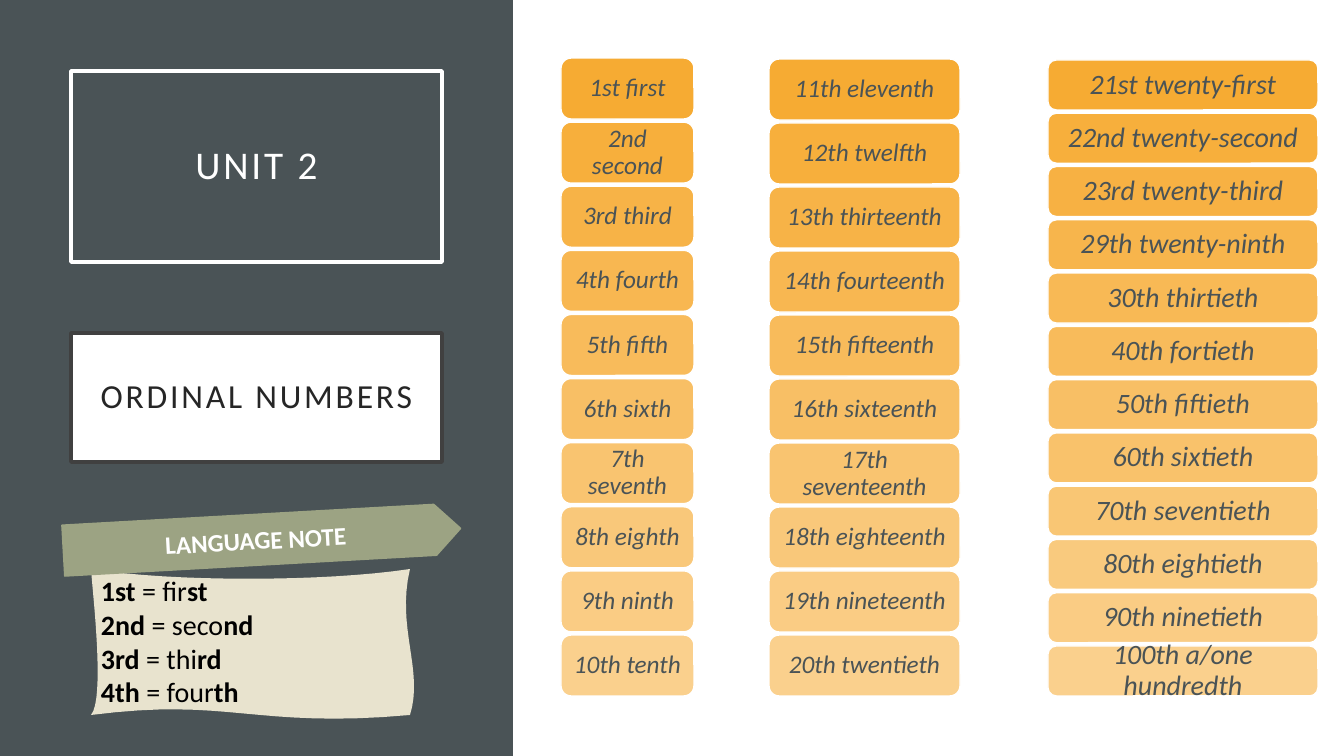
import dataclasses

import pptx
import pptx.util
import pptx.dml.color
import pptx.enum.shapes
import pptx.enum.text
import pptx.oxml.ns
import lxml.etree

Kind = pptx.enum.shapes.MSO_SHAPE
Align = pptx.enum.text.PP_ALIGN
Anchor = pptx.enum.text.MSO_ANCHOR


@dataclasses.dataclass(frozen=True)
class Theme:
    """Colours, font and type sizes of the slide."""
    font: str = "Calibri"
    slate: str = "4A5356"
    white: str = "FFFFFF"
    black: str = "000000"
    ink: str = "262626"
    edge: str = "404040"
    amber: str = "F6A21D"
    sage: str = "9CA383"
    cream: str = "E8E3CE"
    title: int = 28
    topic: int = 24
    body: int = 20
    small: int = 18


THEME = Theme()

FIRST = ["1st first", "2nd second", "3rd third", "4th fourth", "5th fifth",
         "6th sixth", "7th seventh", "8th eighth", "9th ninth", "10th tenth"]
TEENS = ["11th eleventh", "12th twelfth", "13th thirteenth", "14th fourteenth",
         "15th fifteenth", "16th sixteenth", "17th seventeenth",
         "18th eighteenth", "19th nineteenth", "20th twentieth"]
TENS = ["21st twenty-first", "22nd twenty-second", "23rd twenty-third",
        "29th twenty-ninth", "30th thirtieth", "40th fortieth",
        "50th fiftieth", "60th sixtieth", "70th seventieth",
        "80th eightieth", "90th ninetieth", "100th a/one hundredth"]
NOTES = [("1st ", "= fir", "st"), ("2nd ", "= seco", "nd"),
         ("3rd ", "= thi", "rd"), ("4th ", "= four", "th")]
WAVE = [[(80, 13), (234, 13), (319, 0)], [(305, 59), (333, 101), (319, 146)],
        [(163, 160), (139, 128), (0, 146)], [(14, 130), (2, 27), (0, 0)]]


def px(size):
    """Turn px into EMU."""
    return pptx.util.Emu(round(size * 12192000 / 1344))


def rgb(code):
    """Make a colour from its hex code."""
    return pptx.dml.color.RGBColor.from_string(code)


def apply(item, **values):
    """Set each value as an attribute of the item."""
    for name, value in values.items():
        setattr(item, name, value)


def paint(shape, fill=None, line=None, width=1.0, alpha=100):
    """Give a shape its fill and line, without shadow."""
    shape.shadow.inherit = False
    if fill:
        shape.fill.solid()
        shape.fill.fore_color.rgb = rgb(fill)
        if alpha < 100:
            name = pptx.oxml.ns.qn("a:solidFill")
            tint = shape._element.spPr.find(name)[0]
            lxml.etree.SubElement(tint, pptx.oxml.ns.qn("a:alpha"),
                                  val=str(round(alpha * 1000)))
    else:
        shape.fill.background()
    if line:
        shape.line.color.rgb = rgb(line)
        shape.line.width = pptx.util.Pt(width)
    else:
        shape.line.fill.background()


def block(shapes, kind, box, **look):
    """Add a painted preset shape in the box."""
    shape = shapes.add_shape(kind, *map(px, box))
    paint(shape, **look)
    return shape


def write(para, text, size, color, space=0, **values):
    """Add a run of text to a paragraph."""
    run = para.add_run()
    run.text = text
    apply(run.font, name=THEME.font, size=pptx.util.Pt(size), **values)
    run.font.color.rgb = rgb(color)
    if space:
        run._r.get_or_add_rPr().set("spc", str(space * 100))


def label(shape, text, size, color, pad=(10, 5), lead=0.9, **values):
    """Write one centred paragraph in a shape."""
    frame = shape.text_frame
    side, top = map(px, pad)
    apply(frame, word_wrap=True, vertical_anchor=Anchor.MIDDLE,
          margin_left=side, margin_right=side, margin_top=top, margin_bottom=top)
    para = frame.paragraphs[0]
    apply(para, alignment=Align.CENTER, line_spacing=lead)
    write(para, text, size, color, **values)


def column(shapes, box, row, names, size, side):
    """Stack fading number tiles evenly in the box."""
    tiles = shapes.add_group_shape().shapes
    left, top, width, high = box
    last = len(names) - 1
    step = (high - row) / last
    for spot, name in enumerate(names):
        tile = block(tiles, Kind.ROUNDED_RECTANGLE,
                     (left, top + spot * step, width, row),
                     fill=THEME.amber, line=THEME.white, alpha=90 - 40 * spot / last)
        label(tile, name, size, THEME.slate, pad=(side, 4), italic=True)


def curve(start, bends, steps=16):
    """List points along joined cubic curves."""
    dots = []
    for one, two, end in bends:
        for step in range(1, steps + 1):
            t = step / steps
            u = 1 - t
            dots.append(tuple(u**3 * a + 3 * u * u * t * b + 3 * u * t * t * c + t**3 * d
                              for a, b, c, d in zip(start, one, two, end)))
        start = end
    return dots


def note(shapes, box):
    """Place the wavy language note and its arrow banner in the box."""
    parts = shapes.add_group_shape().shapes
    left, top = box[:2]
    x, y = left + 28, top + 55
    pen = parts.build_freeform(px(x), px(y))
    pen.add_line_segments([(px(x + a), px(y + b)) for a, b in curve((0, 0), WAVE)])
    sheet = pen.convert_to_shape()
    paint(sheet, fill=THEME.cream)
    frame = sheet.text_frame
    apply(frame, word_wrap=True, vertical_anchor=Anchor.TOP)
    for spot, words in enumerate(NOTES):
        para = frame.add_paragraph() if spot else frame.paragraphs[0]
        para.alignment = Align.LEFT
        for word, bold in zip(words, (True, False, True)):
            write(para, word, THEME.body, THEME.black, bold=bold)
    flag = block(parts, Kind.PENTAGON, (left, top, box[2], 51),
                 fill=THEME.sage, line=THEME.sage)
    flag.rotation = 356.8
    label(flag, "LANGUAGE NOTE", THEME.small, THEME.white, lead=1.0, bold=True)


def panel(shapes, box):
    """Place the dark side panel with title, topic and note."""
    left, top = box[:2]
    block(shapes, Kind.RECTANGLE, box, fill=THEME.slate)
    head = block(shapes, Kind.RECTANGLE, (left + 71, top + 71, 371, 191),
                 line=THEME.white, width=2.5)
    label(head, "UNIT 2", THEME.title, THEME.white, pad=(20, 20), space=2)
    topic = block(shapes, Kind.RECTANGLE, (left + 71, top + 333, 371, 129),
                  fill=THEME.white, line=THEME.edge, width=2.5)
    label(topic, "ORDINAL NUMBERS", THEME.topic, THEME.ink, pad=(20, 20), space=2)
    note(shapes, (left + 63, top + 514, 398, 201))


def lists(shapes, box):
    """Place the three columns of ordinal numbers in the box."""
    left, top, _, high = box
    column(shapes, (left, top, 133, high), 61, FIRST, THEME.small, 7)
    column(shapes, (left + 208, top + 1, 191, high - 1), 61, TEENS, THEME.small, 7)
    column(shapes, (left + 487, top + 2, 270, high - 2), 50, TENS, THEME.body, 8)


def main():
    """Build and save the slide."""
    deck = pptx.Presentation()
    apply(deck, slide_width=px(1344), slide_height=px(756))
    shapes = deck.slides.add_slide(deck.slide_layouts[6]).shapes
    panel(shapes, (0, 0, 513, 756))
    lists(shapes, (561, 58, 757, 638))
    deck.save("out.pptx")


if __name__ == "__main__":
    main()
